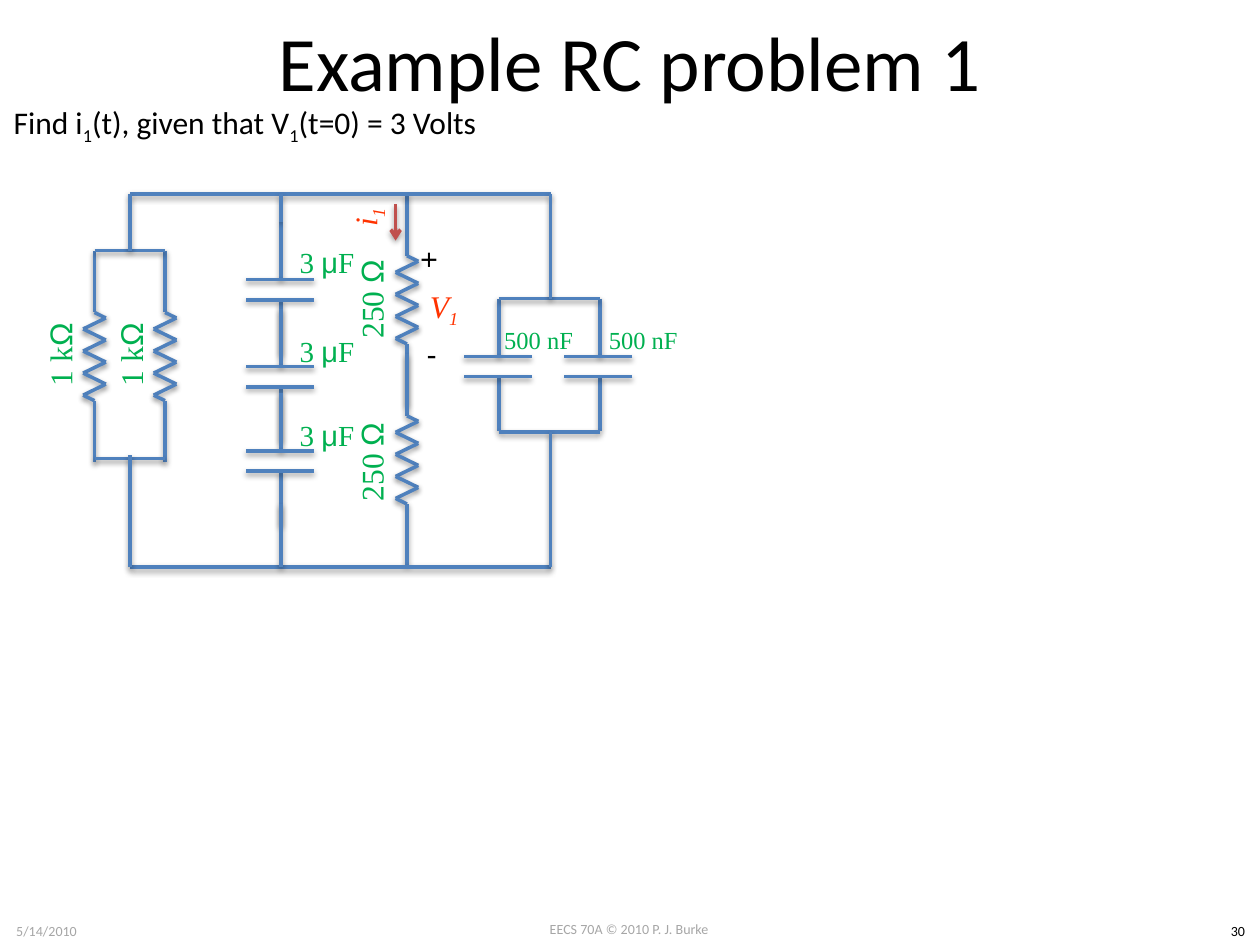
from dataclasses import dataclass
from itertools import pairwise

from lxml import etree
from pptx import Presentation
from pptx.dml.color import RGBColor
from pptx.enum.shapes import MSO_CONNECTOR
from pptx.enum.text import MSO_ANCHOR, MSO_AUTO_SIZE, PP_ALIGN
from pptx.oxml import parse_xml
from pptx.oxml.ns import qn
from pptx.util import Inches, Pt

DRAWING_NS = "http://schemas.openxmlformats.org/drawingml/2006/main"
SHADOW_XML = (
    f'<a:effectLst xmlns:a="{DRAWING_NS}">'
    '<a:outerShdw blurRad="40000" dist="20000" dir="5400000" rotWithShape="0">'
    '<a:srgbClr val="000000"><a:alpha val="38000"/></a:srgbClr>'
    "</a:outerShdw></a:effectLst>"
)
BLACK, GREY, GREEN, RED = "000000", "A6A6A6", "00B050", "FF3300"
WIRE_BLUE, ARROW_RED = "4F81BD", "C0504D"
SANS, SERIF, SYMBOL = "Calibri", "Times New Roman", "Arial"

Point = tuple[float, float]


@dataclass(frozen=True)
class Piece:
    text: str
    font: str = ""
    subscript: bool = False


@dataclass(frozen=True)
class Label:
    box: tuple[float, float, float, float]
    pieces: tuple[Piece, ...]
    size: float = 18
    font: str = SERIF
    color: str = GREEN
    rotation: int = 0
    italic: bool = False
    centered: bool = True
    middle: bool = True
    wrap: bool = True


def rgb(value: str) -> RGBColor:
    return RGBColor.from_string(value)


def draw_label(shapes, label: Label) -> None:
    box = shapes.add_textbox(*(Inches(length) for length in label.box))
    box.rotation = label.rotation
    frame = box.text_frame
    frame.word_wrap = label.wrap
    frame.auto_size = MSO_AUTO_SIZE.NONE if label.middle else MSO_AUTO_SIZE.SHAPE_TO_FIT_TEXT
    frame.vertical_anchor = MSO_ANCHOR.MIDDLE if label.middle else MSO_ANCHOR.TOP
    paragraph = frame.paragraphs[0]
    paragraph.alignment = PP_ALIGN.CENTER if label.centered else PP_ALIGN.LEFT
    for piece in label.pieces:
        run = paragraph.add_run()
        run.text = piece.text
        run.font.size = Pt(label.size)
        run.font.name = piece.font or label.font
        run.font.italic = label.italic
        run.font.color.rgb = rgb(label.color)
        if piece.subscript:
            run.font._element.set("baseline", "-25000")


def draw_line(shapes, start: Point, end: Point, color: str = WIRE_BLUE, arrow: bool = False) -> None:
    line = shapes.add_connector(
        MSO_CONNECTOR.STRAIGHT, *(Inches(length) for length in (*start, *end))
    )
    line.line.color.rgb = rgb(color)
    line.line.width = Pt(2)
    if arrow:
        etree.SubElement(line.line._get_or_add_ln(), qn("a:tailEnd"), type="arrow")
    line._element.spPr.append(parse_xml(SHADOW_XML))


def draw_resistor(slide, x: float, top: float) -> None:
    lead, body, swing, peaks = 0.49, 0.7, 0.09, 8
    zigzag = [
        (x + swing * (-1) ** peak, top + lead + body * (2 * peak + 1) / (2 * peaks))
        for peak in range(peaks)
    ]
    body_top, body_bottom = top + lead, top + lead + body
    points = [(x, top), (x, body_top), *zigzag, (x, body_bottom), (x, body_bottom + lead)]
    resistor = slide.shapes.add_group_shape()
    for start, end in pairwise(points):
        draw_line(resistor.shapes, start, end)


def draw_capacitor(slide, x: float, top: float) -> None:
    upper_plate, lower_plate = top + 0.46, top + 0.62
    capacitor = slide.shapes.add_group_shape()
    draw_line(capacitor.shapes, (x, top), (x, upper_plate))
    draw_line(capacitor.shapes, (x, lower_plate), (x, top + 1.05))
    for plate in (upper_plate, lower_plate):
        draw_line(capacitor.shapes, (x + 0.26, plate), (x - 0.28, plate))


TOP_RAIL, BOTTOM_RAIL = 1.54, 4.5
LEFT_RAIL, RIGHT_RAIL = 1.03, 4.37
KILOHM_X, KILOHM_TOP, KILOHM_BOTTOM = (0.75, 1.31), 1.99, 3.64
MICRO_X, MICRO_TOPS = 2.23, (1.76, 2.45, 3.12)
OHM_X, OHM_TOPS = 3.23, (TOP_RAIL, 2.81)
NANO_X, NANO_TOP, NANO_BOTTOM = (3.96, 4.76), 2.37, 3.43

WIRES = [
    *(((KILOHM_X[0], y), (KILOHM_X[1], y)) for y in (KILOHM_TOP, KILOHM_BOTTOM)),
    *(((NANO_X[0], y), (NANO_X[1], y)) for y in (NANO_TOP, NANO_BOTTOM)),
    *(((RIGHT_RAIL, y), (LEFT_RAIL, y)) for y in (TOP_RAIL, BOTTOM_RAIL)),
    ((RIGHT_RAIL, NANO_TOP), (RIGHT_RAIL, TOP_RAIL)),
    ((RIGHT_RAIL, NANO_BOTTOM), (RIGHT_RAIL, BOTTOM_RAIL)),
    ((LEFT_RAIL, BOTTOM_RAIL), (LEFT_RAIL, 3.61)),
    ((LEFT_RAIL, TOP_RAIL), (LEFT_RAIL, KILOHM_TOP)),
    ((MICRO_X, MICRO_TOPS[0]), (MICRO_X, TOP_RAIL)),
    ((MICRO_X, 4), (MICRO_X, BOTTOM_RAIL)),
]

OHM = Piece("Ω", SYMBOL)
ONE = Piece("1", subscript=True)
MICROFARADS = (Piece("3 "), Piece("μ", SYMBOL), Piece("F"))
QUESTION = (Piece("Find i"), ONE, Piece("(t), given that V"), ONE, Piece("(t=0) = 3 Volts"))

FOOTERS = [
    Label(box, (Piece(text),), 8, SANS, color, middle=False)
    for box, text, color in (
        ((3.83, 7.26, 2.33, 0.24), "EECS 70A © 2010 P. J. Burke", GREY),
        ((0, 7.27, 0.74, 0.24), "5/14/2010", GREY),
        ((9.65, 7.27, 0.35, 0.24), "30", BLACK),
    )
]
HEADINGS = [
    Label((0.5, 0, 9, 0.97), (Piece("Example RC problem 1"),), 44, SANS, BLACK),
    Label((0.01, 0.77, 3.99, 0.4), QUESTION, 18, SANS, BLACK,
          centered=False, middle=False, wrap=False),
]
VALUES = [
    *(Label((x - 0.87, 2.45, 1.19, 0.73), (Piece("1 k"), OHM), rotation=270) for x in KILOHM_X),
    *(Label((2.24, y, 0.71, 0.37), MICROFARADS, 16.6) for y in (1.89, 2.6, 3.27)),
    *(Label((2.35, y, 1.19, 0.73), (Piece("250 "), OHM), rotation=270) for y in (2.01, 3.3)),
    *(Label((x, 2.33, 1.19, 0.73), (Piece("500 nF"),), 14) for x in (3.68, 4.51)),
]
POLARITY = [
    Label(box, (Piece(sign),), 18, SANS, BLACK, rotation,
          centered=False, middle=False, wrap=False)
    for box, sign, rotation in (
        ((3.26, 1.87, 0.33, 0.4), "+", 90),
        ((3.29, 2.61, 0.28, 0.4), "-", 0),
    )
]
UNKNOWNS = [
    Label((3.14, 2.14, 0.77, 0.61), (Piece("V"), ONE), color=RED, italic=True),
    Label((2.53, 1.42, 0.77, 0.61), (Piece("i"), ONE), color=RED, rotation=270, italic=True),
]


def main() -> None:
    presentation = Presentation()
    presentation.slide_width = Inches(10)
    presentation.slide_height = Inches(7.5)
    slide = presentation.slides.add_slide(presentation.slide_layouts[6])

    for label in FOOTERS + HEADINGS:
        draw_label(slide.shapes, label)
    for x in KILOHM_X:
        draw_resistor(slide, x, KILOHM_TOP)
    for top in MICRO_TOPS:
        draw_capacitor(slide, MICRO_X, top)
    for top in OHM_TOPS:
        draw_resistor(slide, OHM_X, top)
    for x in NANO_X:
        draw_capacitor(slide, x, NANO_TOP)
    for start, end in WIRES:
        draw_line(slide.shapes, start, end)
    for label in VALUES + POLARITY + UNKNOWNS:
        draw_label(slide.shapes, label)
    draw_line(slide.shapes, (3.14, 1.62), (3.14, 1.91), ARROW_RED, arrow=True)

    presentation.save("out.pptx")


if __name__ == "__main__":
    main()
